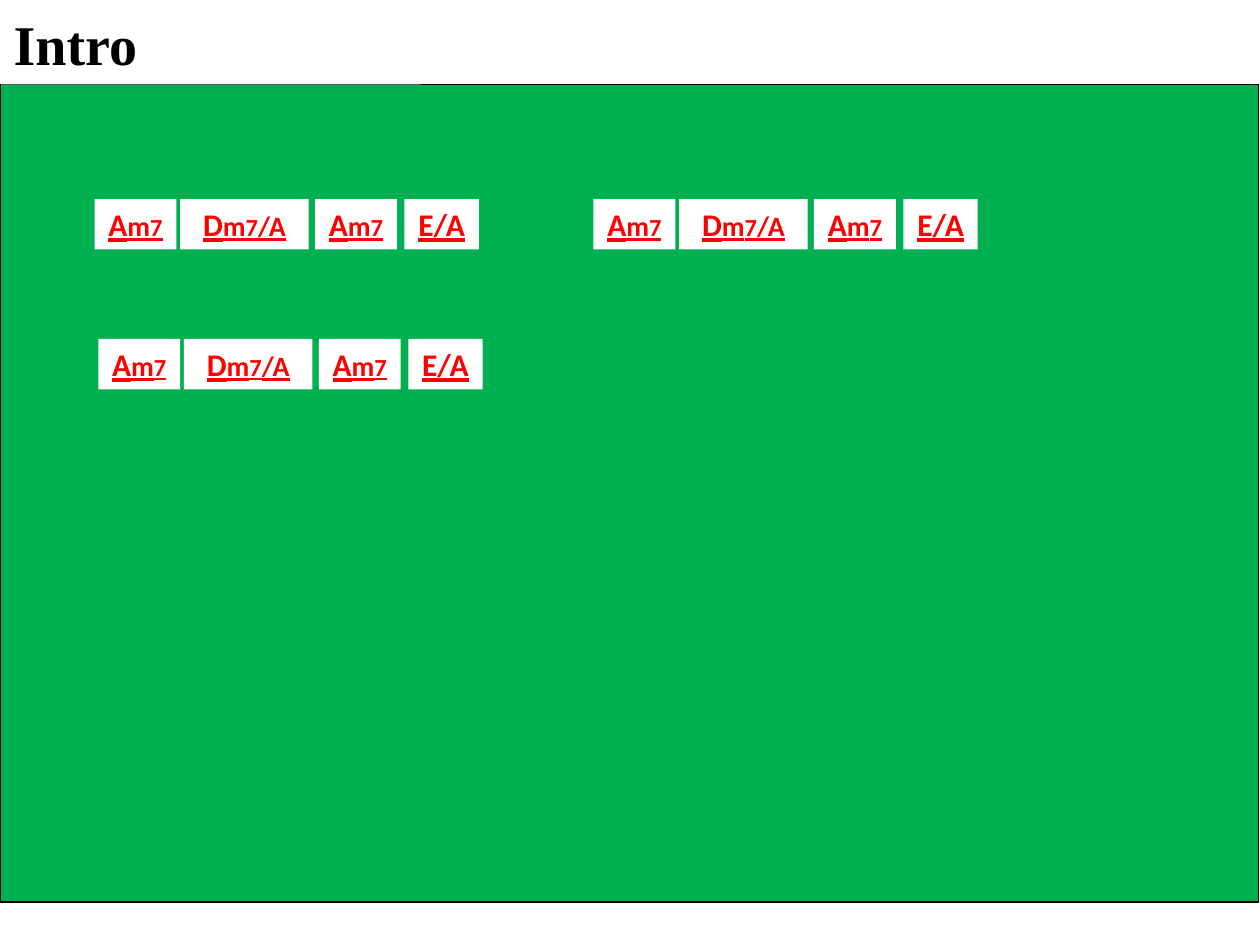
from lxml.etree import SubElement
from pptx import Presentation
from pptx.dml.color import RGBColor
from pptx.enum.shapes import MSO_SHAPE
from pptx.enum.text import MSO_ANCHOR, MSO_AUTO_SIZE, PP_ALIGN
from pptx.oxml.ns import qn
from pptx.util import Inches, Pt

COLORS = {"board": "00B050", "paper": "FFFFFF", "ink": "000000", "chord": "FF0000"}
COLUMNS = 100
AM7 = [("A", 18), ("m", 16), ("7", 14)]
DM7_A = [("D", 18), ("m", 16), ("7", 14), ("/A", 16)]
E_A = [("E/A", 18)]
BAR = [(6.8, 10.2, DM7_A), (17.5, 6.5, AM7), (0, 6.5, AM7), (24.6, 5.9, E_A)]
BAR_STARTS = [(7.5, 15.8), (47.1, 15.8), (7.8, 26.9)]


def color(name):
    return RGBColor.from_string(COLORS[name])


def write(sp, runs, font="Calibri", ink="chord", underline=True, align=PP_ALIGN.CENTER):
    tf = sp.text_frame
    tf.word_wrap = True
    tf.auto_size = MSO_AUTO_SIZE.SHAPE_TO_FIT_TEXT
    tf.vertical_anchor = MSO_ANCHOR.TOP
    p = tf.paragraphs[0]
    p.alignment = align
    before = SubElement(p._p.get_or_add_pPr(), qn("a:spcBef"))
    SubElement(before, qn("a:spcPct")).set("val", "50000")
    for text, size in runs:
        r = p.add_run()
        r.text = text
        r.font.name = font
        r.font.size = Pt(size)
        r.font.bold = True
        r.font.underline = underline
        r.font.color.rgb = color(ink)


class ChordSheet:
    def __init__(self, prs):
        self.unit = prs.slide_width / COLUMNS
        self.s = prs.slides.add_slide(prs.slide_layouts[6])

    def box(self, col, row, cols, rows, fill="paper", line=None):
        place = [round(v * self.unit) for v in (col, row, cols, rows)]
        sp = self.s.shapes.add_shape(MSO_SHAPE.RECTANGLE, *place)
        sp.shadow.inherit = False
        sp.fill.solid()
        sp.fill.fore_color.rgb = color(fill)
        if line:
            sp.line.color.rgb = color(line)
            sp.line.width = Pt(0.75)
        else:
            sp.line.fill.background()
        return sp

    def title(self, text):
        sp = self.box(0.1, 0.3, 33.3, 6.4)
        write(sp, [(text, 32)], font="Times New Roman", ink="ink",
              underline=False, align=PP_ALIGN.LEFT)

    def bar(self, col, row):
        for offset, cols, chord in BAR:
            write(self.box(col + offset, row, cols, 4), chord)


def main():
    prs = Presentation()
    prs.slide_width, prs.slide_height = Inches(10), Inches(7.5)
    sheet = ChordSheet(prs)
    sheet.box(0, 6.7, 99.9, 64.9, fill="board", line="ink")
    sheet.title("Intro")
    for col, row in BAR_STARTS:
        sheet.bar(col, row)
    prs.save("out.pptx")


if __name__ == "__main__":
    main()
